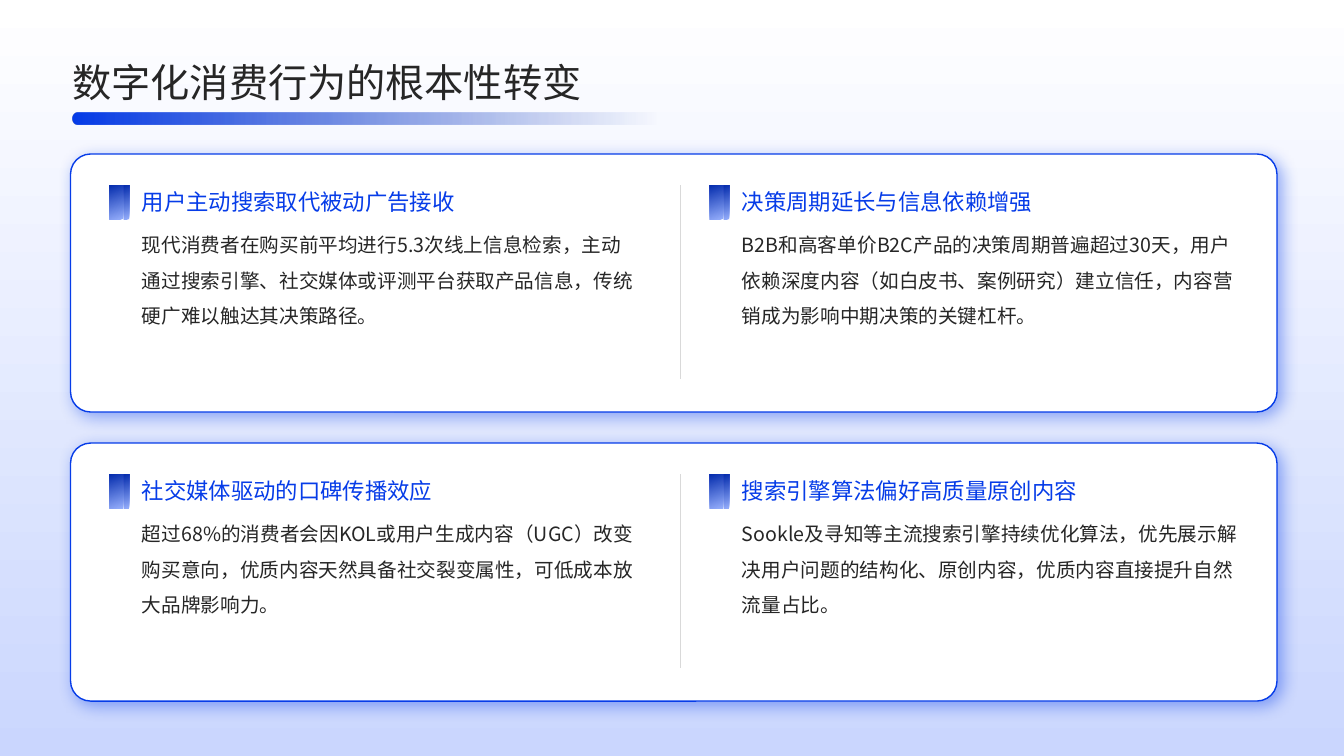
from lxml.etree import SubElement
from pptx import Presentation
from pptx.dml.color import RGBColor
from pptx.enum.shapes import MSO_CONNECTOR, MSO_SHAPE
from pptx.enum.text import MSO_ANCHOR, MSO_AUTO_SIZE, PP_ALIGN
from pptx.oxml.ns import qn
from pptx.util import Pt

FONT = "Noto Sans CJK SC"
COLORS = {
    "white": "FFFFFF", "sky": "CAD6FE", "blue": "063CE8", "navy": "052DAE",
    "pale": "95AEFC", "text": "262626", "divider": "D9D9D9",
}
CARDS = [
    [("用户主动搜索取代被动广告接收",
      "现代消费者在购买前平均进行5.3次线上信息检索，主动通过搜索引擎、社交媒体或评测平台获取产品信息，传统硬广难以触达其决策路径。"),
     ("决策周期延长与信息依赖增强",
      "B2B和高客单价B2C产品的决策周期普遍超过30天，用户依赖深度内容（如白皮书、案例研究）建立信任，内容营销成为影响中期决策的关键杠杆。")],
    [("社交媒体驱动的口碑传播效应",
      "超过68%的消费者会因KOL或用户生成内容（UGC）改变购买意向，优质内容天然具备社交裂变属性，可低成本放大品牌影响力。"),
     ("搜索引擎算法偏好高质量原创内容",
      "Sookle及寻知等主流搜索引擎持续优化算法，优先展示解决用户问题的结构化、原创内容，优质内容直接提升自然流量占比。")],
]


def color(name):
    """Return the named colour."""
    return RGBColor.from_string(COLORS[name])


def add_block(slide, box, preset=MSO_SHAPE.RECTANGLE, radius=None):
    """Add a borderless, shadowless shape."""
    block = slide.shapes.add_shape(preset, *map(Pt, box))
    block.shadow.inherit = False
    block.line.fill.background()
    if radius is not None:
        block.adjustments[0] = radius
    return block


def fill_gradient(block, start, end, clockwise, end_position=1, fade=False):
    """Fill a shape with a two-colour gradient, optionally fading out."""
    block.fill.gradient()
    block.fill.gradient_angle = (360 - clockwise) % 360
    stops = block.fill.gradient_stops
    for stop, name, position in zip(stops, (start, end), (0, end_position)):
        stop.color.rgb = color(name)
        stop.position = position
    if fade:
        end_color = list(block._element.spPr.iter(qn("a:srgbClr")))[-1]
        SubElement(end_color, qn("a:alpha"), val="0")


def write_text(holder, words, size, color_name, spacing, anchor):
    """Write one formatted paragraph into a text holder without margins."""
    frame = holder.text_frame
    frame.word_wrap = True
    frame.auto_size = MSO_AUTO_SIZE.NONE
    frame.vertical_anchor = anchor
    frame.margin_left = frame.margin_right = 0
    frame.margin_top = frame.margin_bottom = 0
    paragraph = frame.paragraphs[0]
    paragraph.alignment = PP_ALIGN.LEFT
    paragraph.line_spacing = spacing
    run = paragraph.add_run()
    run.text = words
    run.font.size = Pt(size)
    run.font.name = FONT
    run.font.color.rgb = color(color_name)
    SubElement(run.font._element, qn("a:ea"), typeface=FONT)


def add_header(slide, box):
    """Place the title and the fading bar below it."""
    left, top, width, height = box
    title = slide.shapes.title
    title.left, title.top, title.width, title.height = map(Pt, box)
    write_text(title, "数字化消费行为的根本性转变", 28, "text", 1.1, MSO_ANCHOR.MIDDLE)
    slide.shapes._spTree.append(title._element)
    bar = add_block(slide, (left, top + 42.5, 522, 8), MSO_SHAPE.ROUNDED_RECTANGLE, 0.5)
    fill_gradient(bar, "blue", "navy", 0, end_position=0.8, fade=True)


def add_point(slide, left, top, heading, body):
    """Place a two-part marker, a heading and its explanation."""
    for offset, width in ((0, 9.4), (10.1, 3.8)):
        marker = add_block(slide, (left + offset, top + 22.2, width, 24.6))
        fill_gradient(marker, "pale", "navy", 250)
    texts = ((heading, 11.4, 32.4, 16, "blue", 1.2, MSO_ANCHOR.BOTTOM),
             (body, 48.2, 118.8, 14, "text", 1.5, MSO_ANCHOR.TOP))
    for words, offset, height, size, name, spacing, anchor in texts:
        holder = slide.shapes.add_textbox(
            Pt(left + 23), Pt(top + offset), Pt(354.2), Pt(height))
        write_text(holder, words, size, name, spacing, anchor)


def add_card(slide, box, points):
    """Place a glowing card with two points and a divider."""
    left, top, width, height = box
    card = add_block(slide, box, MSO_SHAPE.ROUNDED_RECTANGLE, 0.078)
    card.fill.solid()
    card.fill.fore_color.rgb = color("white")
    card.line.color.rgb = color("blue")
    card.line.width = Pt(1)
    effects = card._element.spPr.find(qn("a:effectLst"))
    glow = SubElement(effects, qn("a:outerShdw"), blurRad=str(Pt(12)), dist=str(Pt(3)),
                      dir="2700000", algn="tl", rotWithShape="0")
    tint = SubElement(glow, qn("a:srgbClr"), val=COLORS["blue"])
    SubElement(tint, qn("a:alpha"), val="40000")
    for column, (heading, body) in enumerate(points):
        add_point(slide, left + 28 + column * 428.6, top, heading, body)
    middle = Pt(left + 435.6)
    divider = slide.shapes.add_connector(
        MSO_CONNECTOR.STRAIGHT, middle, Pt(top + 22.2), middle, Pt(top + height - 23.7))
    divider.line.color.rgb = color("divider")
    divider.line.width = Pt(0.5)
    SubElement(divider._element.spPr, qn("a:effectLst"))


def main():
    """Build the slide and save it."""
    deck = Presentation()
    deck.slide_width, deck.slide_height = Pt(960), Pt(540)
    slide = deck.slides.add_slide(deck.slide_layouts[5])
    backdrop = add_block(slide, (0, 0, 960, 540))
    fill_gradient(backdrop, "white", "sky", 90)
    for row, points in enumerate(CARDS):
        add_card(slide, (50.4, 110 + row * 206.5, 861.8, 184.3), points)
    add_header(slide, (51.8, 38.2, 855.4, 36.7))
    deck.save("out.pptx")


if __name__ == "__main__":
    main()
